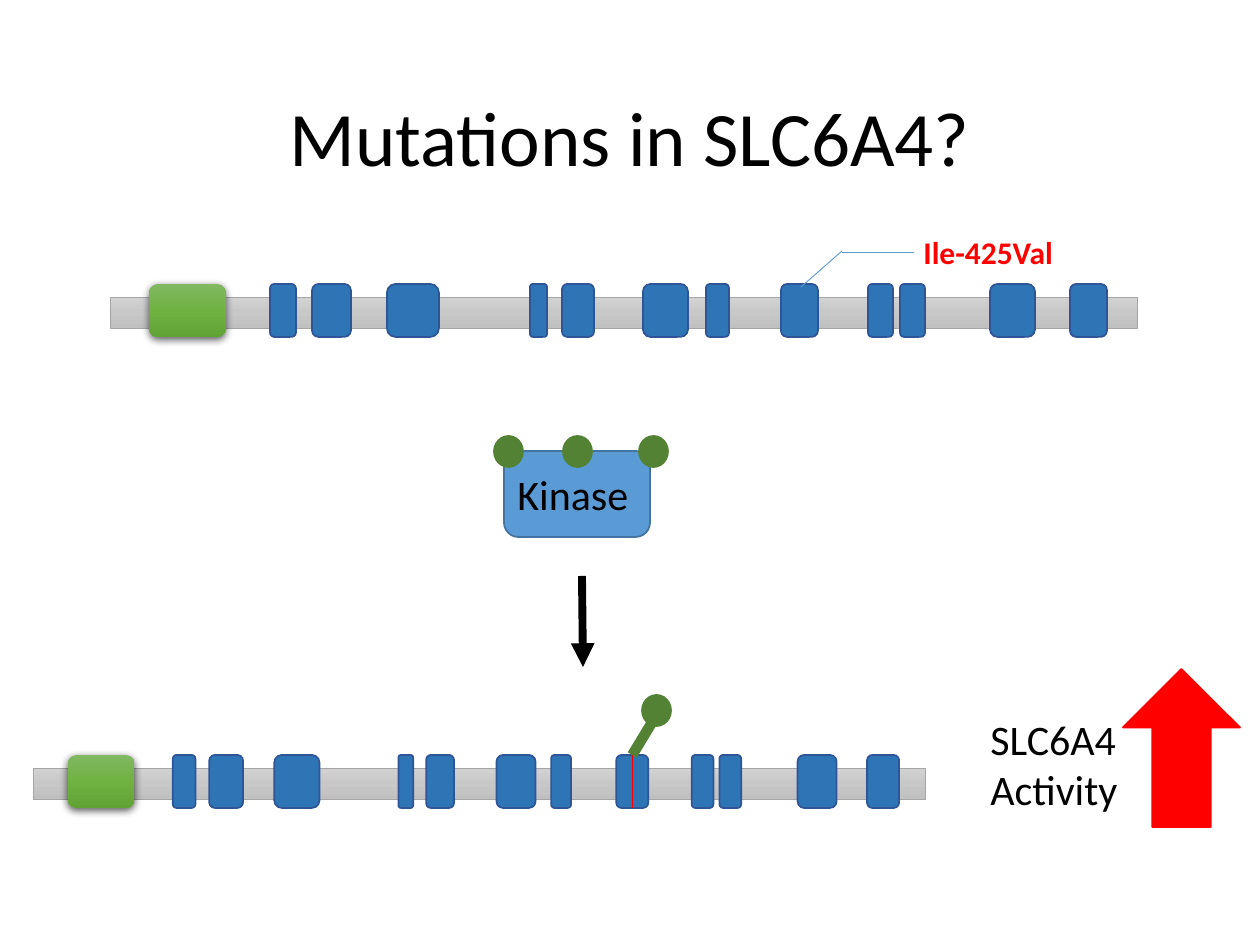
from copy import deepcopy

from lxml.etree import SubElement
from pptx import Presentation
from pptx.dml.color import RGBColor
from pptx.enum.shapes import MSO_CONNECTOR as CONN, MSO_SHAPE as SHAPE
from pptx.enum.text import MSO_ANCHOR as ANCHOR, PP_ALIGN as ALIGN
from pptx.oxml.ns import qn
from pptx.util import Pt

PX = 914400 / 126
BLACK, RED, GREEN = "000000", "FF0000", "548235"
CALLOUT, EXON, EXON_EDGE = "5B9BD5", "2E75B6", "2F5597"
GRAY_FADE = ("D2D2D2", "C8C8C8", "C0C0C0")
GREEN_FADE = ("81B861", "6FB242", "62A336")

# Gene layout at full length: (left, width)
GENE_LEFT, GENE_WIDTH = 110, 1028
PROMOTER = (149, 77)
EXONS = [(270, 26), (312, 39), (387, 52), (530, 17), (562, 32), (643, 45),
         (706, 23), (781, 37), (868, 25), (900, 25), (990, 45), (1070, 37)]
MUTATED = 7
EXON_HEIGHT = 53
DOT_W, DOT_H = 29, 31


def px(n):
    return round(n * PX)


def rgb(color):
    return RGBColor.from_string(color)


class Deck:
    font = "Calibri"

    def __init__(self, width, height):
        self.prs = Presentation()
        self.prs.slide_width, self.prs.slide_height = px(width), px(height)
        self.slide = self.prs.slides.add_slide(self.prs.slide_layouts[6])

    def group(self):
        return self.slide.shapes.add_group_shape()

    def shape(self, kind, x, y, w, h, fill, line=None, weight=1, parent=None):
        """Add a preset shape; a tuple as fill gives a downward gradient."""
        shapes = (parent or self.slide).shapes
        sp = shapes.add_shape(kind, px(x), px(y), px(w), px(h))
        sp.shadow.inherit = False
        if isinstance(fill, tuple):
            self.gradient(sp, fill)
        else:
            sp.fill.solid()
            sp.fill.fore_color.rgb = rgb(fill)
        if line:
            sp.line.color.rgb = rgb(line)
            sp.line.width = Pt(weight)
        else:
            sp.line.fill.background()
        return sp

    def gradient(self, sp, colors):
        sp.fill.gradient()
        sp.fill.gradient_angle = 270
        stop_list = sp._element.spPr.find(".//" + qn("a:gsLst"))
        stop_list.insert(1, deepcopy(stop_list[0]))
        for i, (stop, color) in enumerate(zip(sp.fill.gradient_stops, colors)):
            stop.position = i / 2
            stop.color.rgb = rgb(color)

    def drop_shadow(self, sp):
        effects = sp._element.spPr.find(qn("a:effectLst"))
        shadow = SubElement(effects, qn("a:outerShdw"), blurRad=str(Pt(4.5)),
                            dist=str(Pt(1.5)), dir="5400000", rotWithShape="0")
        color = SubElement(shadow, qn("a:srgbClr"), val=BLACK)
        SubElement(color, qn("a:alpha"), val="63000")

    def dot(self, x, y, parent=None):
        return self.shape(SHAPE.OVAL, x, y, DOT_W, DOT_H, GREEN, GREEN, parent=parent)

    def line(self, x1, y1, x2, y2, color, weight, arrow=False):
        c = self.slide.shapes.add_connector(CONN.STRAIGHT, px(x1), px(y1), px(x2), px(y2))
        c.line.color.rgb = rgb(color)
        c.line.width = Pt(weight)
        if arrow:
            SubElement(c.line._get_or_add_ln(), qn("a:tailEnd"), type="triangle")
        SubElement(c._element.spPr, qn("a:effectLst"))
        return c

    def text(self, text, x, y, w, h, size, color=BLACK, bold=False,
             align=ALIGN.LEFT, anchor=ANCHOR.TOP, spacing=1.0, parent=None):
        shapes = (parent or self.slide).shapes
        tf = shapes.add_textbox(px(x), px(y), px(w), px(h)).text_frame
        tf.word_wrap = True
        tf.vertical_anchor = anchor
        tf.text = text
        for p in tf.paragraphs:
            p.alignment = align
            p.line_spacing = spacing
            for r in p.runs:
                r.font.name, r.font.size, r.font.bold = self.font, Pt(size), bold
                r.font.color.rgb = rgb(color)

    def gene(self, left, top, width):
        """Draw the gene scaled to width and return its mutated exon."""
        g = self.group()
        scale = width / GENE_WIDTH

        def part(span, fill, line=None):
            x, w = span
            return self.shape(SHAPE.ROUNDED_RECTANGLE, left + (x - GENE_LEFT) * scale,
                              top, w * scale, EXON_HEIGHT, fill, line, parent=g)

        self.shape(SHAPE.RECTANGLE, left, top + 13, width, 31, GRAY_FADE,
                   "A5A5A5", 0.5, parent=g)
        self.drop_shadow(part(PROMOTER, GREEN_FADE))
        exons = [part(span, EXON, EXON_EDGE) for span in EXONS]
        return exons[MUTATED]

    def kinase(self):
        g = self.group()
        self.shape(SHAPE.ROUNDED_RECTANGLE, 504, 451, 146, 86, CALLOUT, "43739E", parent=g)
        for x in (494, 563, 639):
            self.dot(x, 436, parent=g)
        self.text("Kinase", 505, 462, 141, 63, 24, parent=g)


def main():
    d = Deck(1260, 945)
    d.text("Mutations in SLC6A4?", 87, 50, 1086, 183, 44,
           align=ALIGN.CENTER, anchor=ANCHOR.MIDDLE, spacing=0.9)

    d.gene(GENE_LEFT, 284, GENE_WIDTH)
    d.line(801, 287, 842, 251, CALLOUT, 0.5)
    d.line(842, 252, 914, 252, CALLOUT, 0.5)
    d.text("Ile-425Val", 911, 227, 266, 50, 18, RED, bold=True)

    d.kinase()
    d.line(582, 576, 583, 667, BLACK, 4.5, arrow=True)

    exon = d.gene(34, 755, 892)
    mutation = d.line(635, 808, 635, 755, RED, 0.5)
    mutation.begin_connect(exon, 2)
    mutation.end_connect(exon, 0)
    stalk = d.line(635, 755, 659, 711, GREEN, 6)
    stalk.begin_connect(exon, 0)
    d.dot(642, 695)

    d.text("SLC6A4\nActivity", 978, 707, 164, 115, 24)
    d.shape(SHAPE.UP_ARROW, 1123, 669, 117, 158, RED, RED)
    d.prs.save("out.pptx")


if __name__ == "__main__":
    main()
